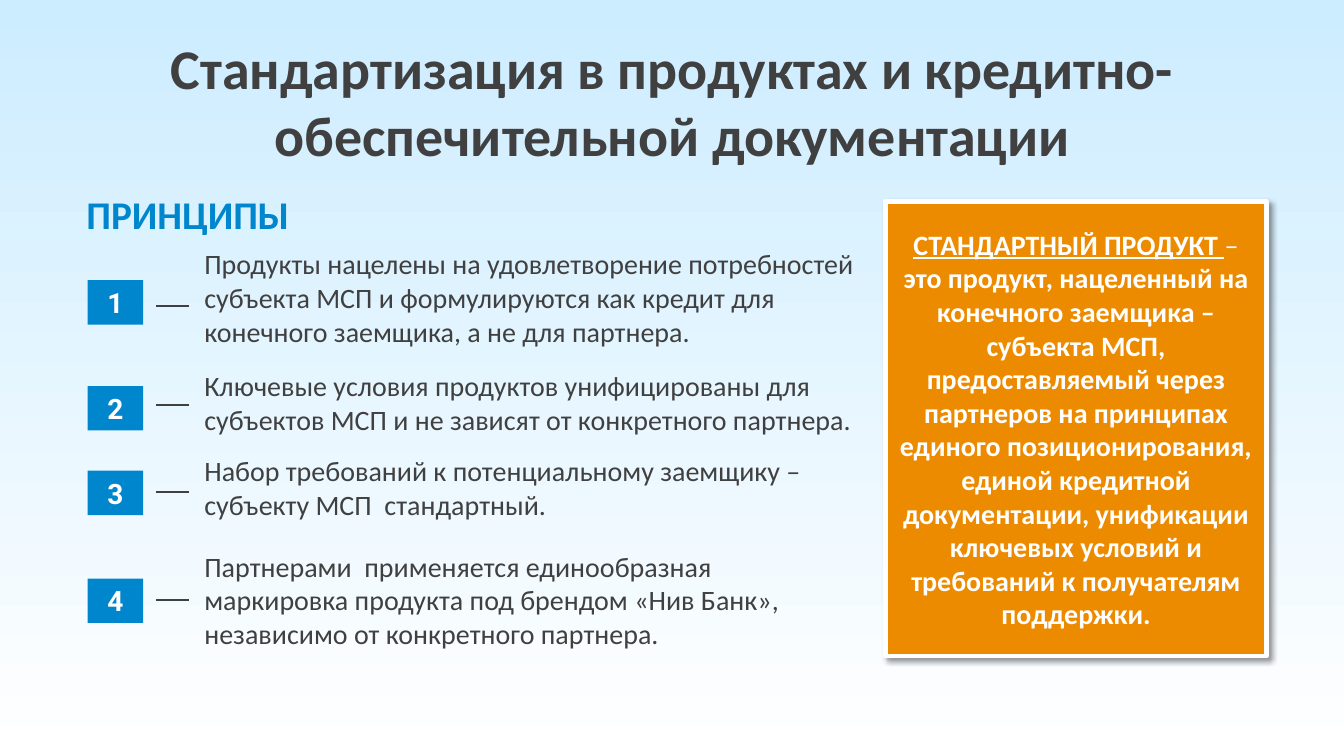
from lxml.etree import SubElement
from pptx import Presentation
from pptx.dml.color import RGBColor
from pptx.enum.shapes import MSO_CONNECTOR, MSO_SHAPE
from pptx.enum.text import MSO_ANCHOR, MSO_AUTO_SIZE, PP_ALIGN
from pptx.oxml.ns import qn
from pptx.util import Inches, Pt

COLORS = {
    "sky": "CCECFF",
    "white": "FFFFFF",
    "blue": "0086CD",
    "orange": "ED8B00",
    "text": "404040",
    "shadow": "000000",
}

PRINCIPLES = [
    ("Продукты нацелены на удовлетворение потребностей субъекта МСП и формулируются "
     "как кредит для конечного заемщика, а не для партнера.", 2.4, 1.11, 2.78, 3.04),
    ("Ключевые условия продуктов унифицированы для субъектов МСП и не зависят "
     "от конкретного партнера.", 3.61, 0.77, 3.83, 4.02),
    ("Набор требований к потенциальному заемщику – субъекту МСП  стандартный.",
     4.45, 0.77, 4.67, 4.88),
    ("Партнерами  применяется единообразная маркировка продукта под брендом "
     "«Нив Банк», независимо от конкретного партнера.", 5.4, 1.11, 5.74, 5.95),
]

DEFINITION = [
    ("СТАНДАРТНЫЙ ПРОДУКТ ", True, True),
    ("– ", False, False),
    ("это продукт, нацеленный на конечного заемщика – субъекта МСП, предоставляемый "
     "через партнеров на принципах единого позиционирования, единой кредитной "
     "документации, унификации ключевых условий и требований к получателям поддержки.",
     True, False),
]


def rgb(name):
    return RGBColor.from_string(COLORS[name])


class SlideBuilder:
    def __init__(self, slide, font="Calibri", size=20):
        self.slide = slide
        self.font = font
        self.size = size

    def background(self, top, bottom):
        fill = self.slide.background.fill
        fill.gradient()
        fill.gradient_angle = 270
        for stop, color in zip(fill.gradient_stops, (top, bottom)):
            stop.color.rgb = rgb(color)

    def style(self, span, color, size=None, bold=False, underline=False, font=None):
        span.font.name = font or self.font
        span.font.size = Pt(size or self.size)
        span.font.bold = bold
        span.font.underline = underline
        span.font.color.rgb = rgb(color)

    def title(self, text, left, top, width, height):
        box = self.slide.shapes.title
        box.left, box.top = Inches(left), Inches(top)
        box.width, box.height = Inches(width), Inches(height)
        frame = box.text_frame
        frame.text = text
        frame.auto_size = MSO_AUTO_SIZE.NONE
        frame.vertical_anchor = MSO_ANCHOR.TOP
        para = frame.paragraphs[0]
        para.alignment = PP_ALIGN.CENTER
        self.style(para.runs[0], "text", size=40, bold=True)

    def text(self, text, left, top, width, height, color="text", **look):
        box = self.slide.shapes.add_textbox(
            Inches(left), Inches(top), Inches(width), Inches(height))
        frame = box.text_frame
        frame.word_wrap = True
        frame.text = text
        self.style(frame.paragraphs[0].runs[0], color, **look)

    def panel(self, preset, left, top, width, height, fill):
        panel = self.slide.shapes.add_shape(
            preset, Inches(left), Inches(top), Inches(width), Inches(height))
        panel.shadow.inherit = False
        panel.fill.solid()
        panel.fill.fore_color.rgb = rgb(fill)
        panel.line.fill.background()
        panel.text_frame.word_wrap = True
        panel.text_frame.vertical_anchor = MSO_ANCHOR.MIDDLE
        panel.text_frame.paragraphs[0].alignment = PP_ALIGN.CENTER
        return panel

    def badge(self, number, left, top):
        badge = self.panel(MSO_SHAPE.RECTANGLE, left, top, 0.55, 0.44, "blue")
        para = badge.text_frame.paragraphs[0]
        para.text = str(number)
        self.style(para.runs[0], "white", bold=True, font="Roboto")

    def dash(self, left, right, top):
        dash = self.slide.shapes.add_connector(
            MSO_CONNECTOR.STRAIGHT, Inches(left), Inches(top), Inches(right), Inches(top))
        dash.line.color.rgb = rgb("text")
        dash.line.width = Pt(1.5)
        SubElement(dash.element.spPr, qn("a:effectLst"))

    def callout(self, spans, left, top, width, height):
        callout = self.panel(
            MSO_SHAPE.FLOWCHART_PROCESS, left, top, width, height, "orange")
        callout.line.color.rgb = rgb("white")
        callout.line.width = Pt(3)
        self.cast_shadow(callout)
        para = callout.text_frame.paragraphs[0]
        for text, bold, underline in spans:
            span = para.add_run()
            span.text = text
            self.style(span, "white", bold=bold, underline=underline)

    def cast_shadow(self, shape):
        effects = shape.element.spPr.find(qn("a:effectLst"))
        shadow = SubElement(
            effects, qn("a:outerShdw"), blurRad=str(Pt(4)), dist=str(Pt(3)),
            dir="2700000", algn="tl", rotWithShape="0")
        color = SubElement(shadow, qn("a:srgbClr"), val=COLORS["shadow"])
        SubElement(color, qn("a:alpha"), val="40000")


def main():
    deck = Presentation()
    deck.slide_width, deck.slide_height = Inches(13.34), Inches(7.5)
    page = SlideBuilder(deck.slides.add_slide(deck.slide_layouts[5]))
    page.background("sky", "white")
    page.title("Стандартизация в продуктах и кредитно-обеспечительной документации",
               0.45, 0.28, 12.44, 1.45)
    page.text("ПРИНЦИПЫ", 0.76, 1.84, 6.14, 0.57, color="blue", size=28, bold=True)
    for number, principle in enumerate(PRINCIPLES, 1):
        text, text_top, text_height, badge_top, dash_top = principle
        page.badge(number, 0.87, badge_top)
        page.dash(1.55, 1.88, dash_top)
        page.text(text, 1.93, text_top, 6.7, text_height)
    page.callout(DEFINITION, 8.79, 2, 3.78, 4.51)
    deck.save("out.pptx")


if __name__ == "__main__":
    main()
